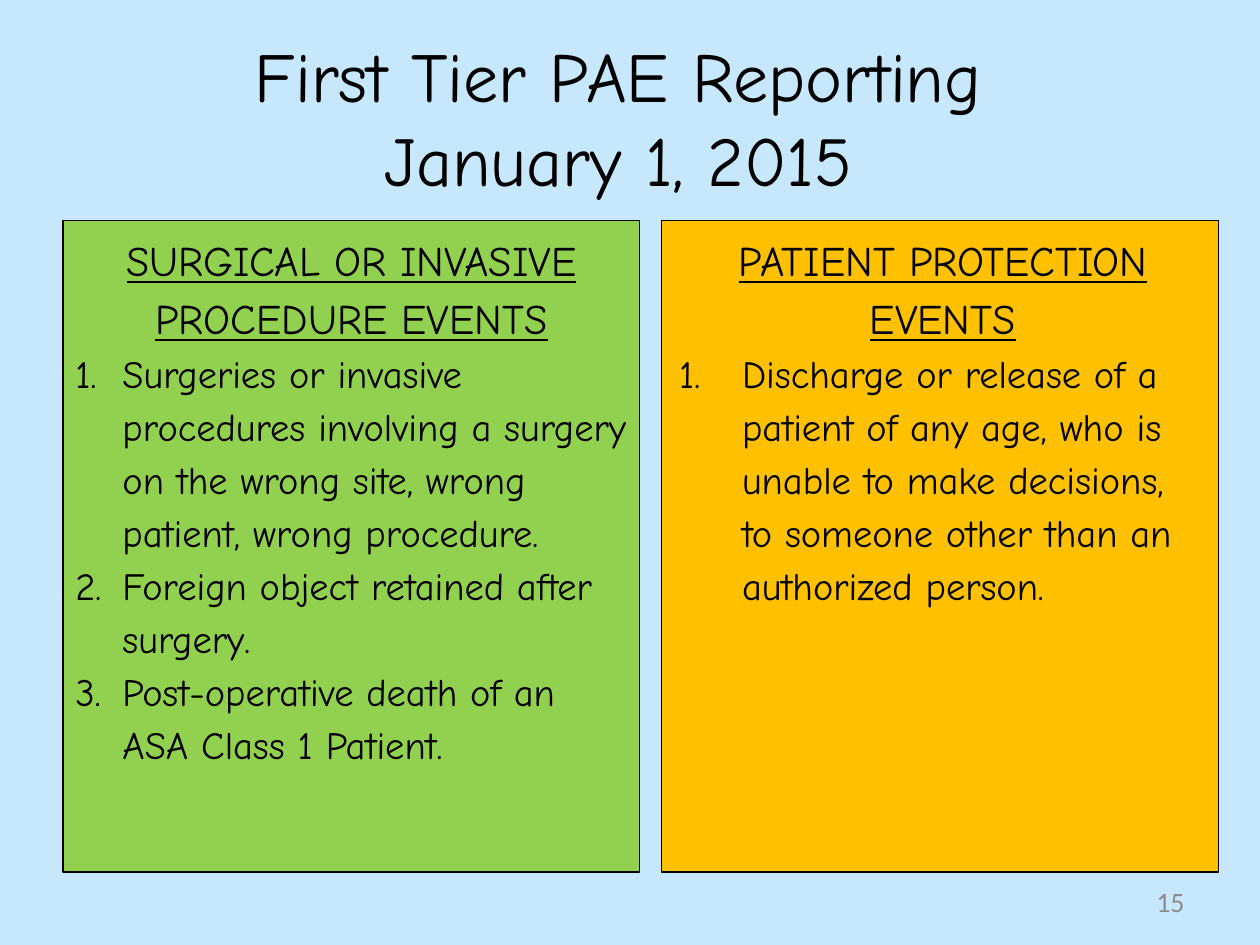
"""Build the slide on first tier PAE reporting."""
import pptx
import pptx.dml.color
import pptx.enum.shapes
import pptx.enum.text
import pptx.util
from lxml import etree

Cm = pptx.util.Cm
Pt = pptx.util.Pt
RGBColor = pptx.dml.color.RGBColor
Align = pptx.enum.text.PP_ALIGN
Anchor = pptx.enum.text.MSO_ANCHOR

SKY = RGBColor(0xC6, 0xE7, 0xFC)
GREEN = RGBColor(0x92, 0xD0, 0x50)
AMBER = RGBColor(0xFF, 0xC0, 0x00)
BLACK = RGBColor(0x00, 0x00, 0x00)
GRAY = RGBColor(0x8C, 0x8C, 0x8C)

TITLE = ["First Tier PAE Reporting ", "January 1, 2015 "]
PAGE_NUMBER = "15"
PANELS = [
    {
        "heading": "SURGICAL OR INVASIVE PROCEDURE EVENTS",
        "events": [
            "Surgeries or invasive procedures involving a surgery on the wrong site, "
            "wrong patient, wrong procedure.",
            "Foreign object retained after surgery.",
            "Post-operative death of an ASA Class 1 Patient.",
        ],
        "fill": GREEN, "left": 1.27, "width": 11.63,
        "heading_indent": 0, "event_indent": 0.95, "hanging": 0.95,
    },
    {
        "heading": "PATIENT PROTECTION EVENTS",
        "events": [
            "Discharge or release of a patient of any age, who is unable to make "
            "decisions, to someone other than an authorized person.",
        ],
        "fill": AMBER, "left": 13.34, "width": 11.23,
        "heading_indent": 0.1, "event_indent": 1.37, "hanging": 1.27,
    },
]
PANEL_TOP, PANEL_HEIGHT = 4.45, 13.13


def write(paragraph, *lines, size, font="Comic Neue", color=BLACK, align=Align.LEFT,
          underline=False, spacing=None, indent=0, hanging=0, numbered=False):
    """Fill a paragraph with formatted lines, numbering it if asked."""
    paragraph.alignment = align
    paragraph.line_spacing = spacing
    for index, line in enumerate(lines):
        if index:
            paragraph.add_line_break()
        run = paragraph.add_run()
        run.text = line
        run.font.size = Pt(size)
        run.font.name = font
        run.font.color.rgb = color
        run.font.underline = underline
    properties = paragraph._p.get_or_add_pPr()
    properties.set("marL", str(Cm(indent)))
    properties.set("indent", str(-Cm(hanging)))
    if numbered:
        number = etree.SubElement(properties, pptx.oxml.ns.qn("a:buAutoNum"))
        number.set("type", "arabicPeriod")


def add_label(slide, left, top, width, height, *lines, **text_format):
    """Add a vertically centred text box."""
    frame = slide.shapes.add_textbox(Cm(left), Cm(top), Cm(width), Cm(height)).text_frame
    frame.word_wrap = True
    frame.vertical_anchor = Anchor.MIDDLE
    write(frame.paragraphs[0], *lines, **text_format)


def add_panel(slide, panel):
    """Add a filled panel with its heading and numbered events."""
    box = slide.shapes.add_shape(
        pptx.enum.shapes.MSO_SHAPE.RECTANGLE,
        Cm(panel["left"]), Cm(PANEL_TOP), Cm(panel["width"]), Cm(PANEL_HEIGHT))
    box.shadow.inherit = False
    box.fill.solid()
    box.fill.fore_color.rgb = panel["fill"]
    box.line.color.rgb = BLACK
    box.line.width = Pt(0.75)
    frame = box.text_frame
    frame.word_wrap = True
    frame.vertical_anchor = Anchor.TOP
    write(frame.paragraphs[0], panel["heading"], size=24, align=Align.CENTER,
          underline=True, spacing=1.15, indent=panel["heading_indent"])
    for event in panel["events"]:
        write(frame.add_paragraph(), event, size=22, spacing=1.15, numbered=True,
              indent=panel["event_indent"], hanging=panel["hanging"])


def main():
    """Assemble and save the slide."""
    deck = pptx.Presentation()
    deck.slide_width, deck.slide_height = Cm(25.4), Cm(19.05)
    slide = deck.slides.add_slide(deck.slide_layouts[6])
    slide.background.fill.solid()
    slide.background.fill.fore_color.rgb = SKY
    add_label(slide, 1.27, 0.76, 22.86, 3.18, *TITLE, size=40, align=Align.CENTER)
    for panel in PANELS:
        add_panel(slide, panel)
    add_label(slide, 18.2, 17.66, 5.93, 1.01, PAGE_NUMBER, size=16, font="Calibri",
              color=GRAY, align=Align.RIGHT)
    deck.save("out.pptx")


if __name__ == "__main__":
    main()
